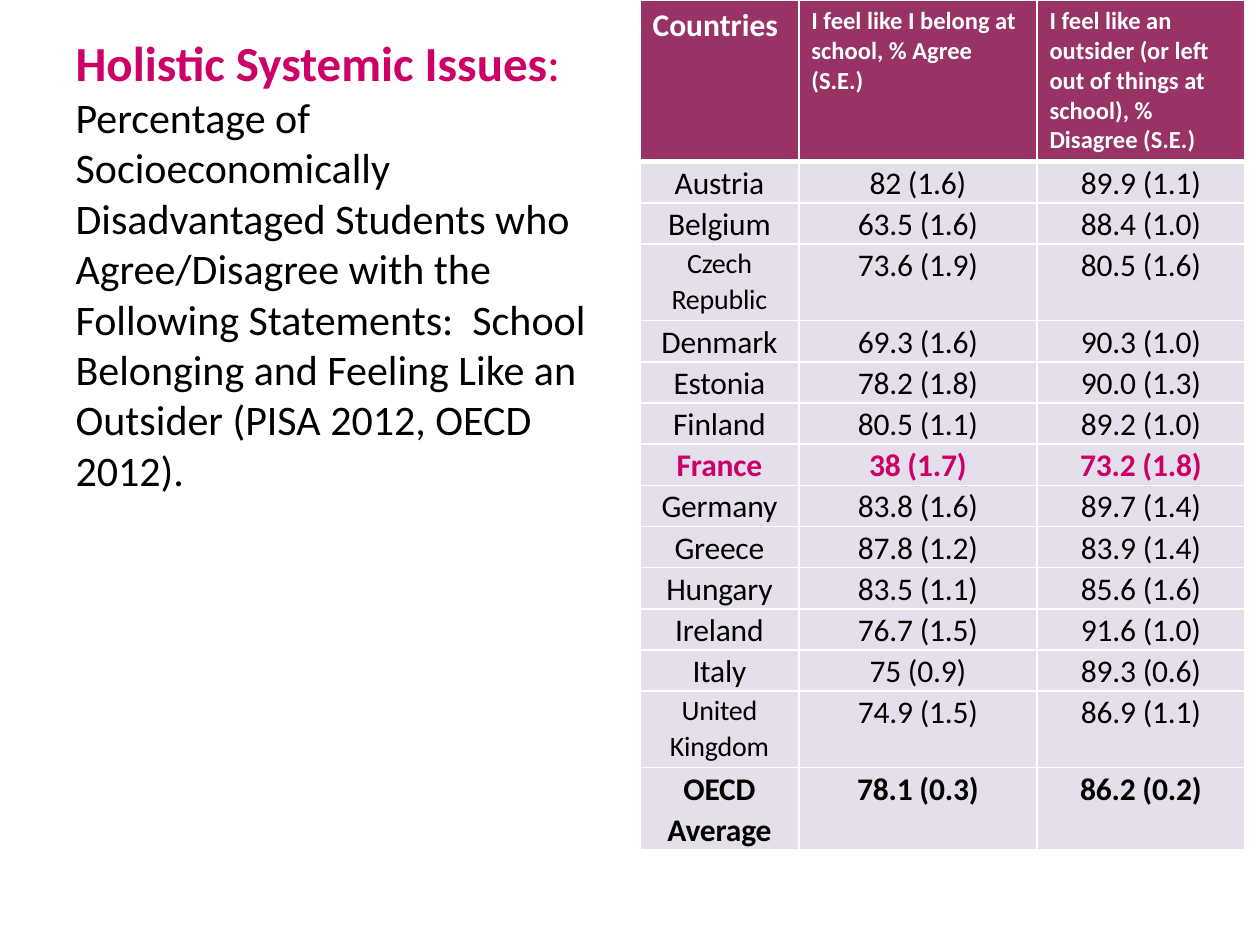
"""Build a slide on school belonging: a statement beside a table of countries."""
from dataclasses import dataclass

import pptx
import pptx.dml.color
import pptx.enum.text
import pptx.oxml
import pptx.oxml.ns
import pptx.util

COLORS = {"accent": "CC0066", "header": "993366", "body": "E5DFEC",
          "text": "000000", "white": "FFFFFF"}
FONT = "Calibri"
ALIGN = pptx.enum.text.PP_ALIGN
SLIDE_W, SLIDE_H = pptx.util.Inches(10), pptx.util.Inches(7.5)
COL_SHARES = (0.126, 0.189, 0.165)
HEADER_SHARE, ROW_SHARE, TALL_SHARE = 0.141, 0.04, 0.081
SIDE_INSET = pptx.util.Inches(0.07)
CELL_FORMAT = {"margin_left": SIDE_INSET, "margin_right": SIDE_INSET,
               "margin_top": 0, "margin_bottom": 0}


@dataclass
class Style:
    """Look of a run of text."""
    size: float
    color: str = "text"
    bold: bool = False
    spacing: int = 0


@dataclass
class Row:
    """A country with its two percentages."""
    country: str
    belong: str
    outsider: str
    size: float = 18
    color: str = "text"
    bold: bool = False
    share: float = ROW_SHARE


HEADERS = (
    ("Countries", 18),
    ("I feel like I belong at school, % Agree (S.E.)", 14),
    ("I feel like an outsider (or left out of things at school), % Disagree (S.E.)", 14),
)
ROWS = (
    Row("Austria", "82 (1.6)", "89.9 (1.1)"),
    Row("Belgium", "63.5 (1.6)", "88.4 (1.0)"),
    Row("Czech Republic", "73.6 (1.9)", "80.5 (1.6)", size=16, share=TALL_SHARE),
    Row("Denmark", "69.3 (1.6)", "90.3 (1.0)"),
    Row("Estonia", "78.2 (1.8)", "90.0 (1.3)"),
    Row("Finland", "80.5 (1.1)", "89.2 (1.0)"),
    Row("France", "38 (1.7)", "73.2 (1.8)", color="accent", bold=True),
    Row("Germany", "83.8 (1.6)", "89.7 (1.4)"),
    Row("Greece", "87.8 (1.2)", "83.9 (1.4)"),
    Row("Hungary", "83.5 (1.1)", "85.6 (1.6)"),
    Row("Ireland", "76.7 (1.5)", "91.6 (1.0)"),
    Row("Italy", "75 (0.9)", "89.3 (0.6)"),
    Row("United Kingdom", "74.9 (1.5)", "86.9 (1.1)", size=16, share=TALL_SHARE),
    Row("OECD Average", "78.1 (0.3)", "86.2 (0.2)", bold=True, share=TALL_SHARE),
)
STATEMENT = (
    ("Holistic Systemic Issues", Style(28, "accent", True)),
    (": ", Style(28, "accent")),
    ("Percentage of Socioeconomically Disadvantaged Students who Agree/Disagree "
     "with the Following Statements:  School Belonging and Feeling Like an "
     "Outsider (PISA 2012, OECD 2012).", Style(24)),
)


def across(share: float) -> int:
    """Turn a share of the slide's width into a length."""
    return round(SLIDE_W * share)


def down(share: float) -> int:
    """Turn a share of the slide's height into a length."""
    return round(SLIDE_H * share)


def rgb(name: str) -> pptx.dml.color.RGBColor:
    """Look up a colour by name."""
    return pptx.dml.color.RGBColor.from_string(COLORS[name])


def apply(target: object, values: dict) -> None:
    """Set each named attribute on an object."""
    for name, value in values.items():
        setattr(target, name, value)


def add_run(p, text: str, style: Style) -> None:
    """Append styled text to a paragraph."""
    r = p.add_run()
    r.text = text
    apply(r.font, {"name": FONT, "size": pptx.util.Pt(style.size), "bold": style.bold})
    r.font.color.rgb = rgb(style.color)
    if style.spacing:
        r.font._element.set("spc", str(style.spacing))


def add_borders(cell, widths: dict) -> None:
    """Draw white lines, with widths in points, around a cell."""
    props = cell._tc.get_or_add_tcPr()
    for side, width in widths.items():
        props.append(pptx.oxml.parse_xml(
            f'<a:ln{side} {pptx.oxml.ns.nsdecls("a")} w="{pptx.util.Pt(width)}">'
            f'<a:solidFill><a:srgbClr val="{COLORS["white"]}"/></a:solidFill></a:ln{side}>'))


def fill_cell(cell, text: str, style: Style, fill: str, top: int, bottom: int):
    """Fill a table cell and return its paragraph."""
    add_borders(cell, {"L": 1, "R": 1, "T": top, "B": bottom})
    cell.fill.solid()
    cell.fill.fore_color.rgb = rgb(fill)
    p = cell.text_frame.paragraphs[0]
    add_run(p, text, style)
    return p


def add_statement(s) -> None:
    """Write the statement in the two-column body placeholder."""
    title, sp = s.shapes.title, s.placeholders[1]
    title.element.getparent().remove(title.element)
    apply(sp, {"left": across(0.05), "top": down(0.028),
               "width": across(0.9), "height": down(0.83)})
    tf = sp.text_frame
    apply(tf, {"word_wrap": True, "auto_size": pptx.enum.text.MSO_AUTO_SIZE.NONE})
    tf._txBody.bodyPr.set("numCol", "2")
    p = tf.paragraphs[0]
    props = p._p.get_or_add_pPr()
    props.set("marL", "0")
    props.set("indent", "0")
    props.append(pptx.oxml.parse_xml(f'<a:buNone {pptx.oxml.ns.nsdecls("a")}/>'))
    p.space_before = pptx.util.Pt(0)
    for text, style in STATEMENT:
        add_run(p, text, style)


def add_country_table(s) -> None:
    """Add the table of countries."""
    shares = [HEADER_SHARE, *(row.share for row in ROWS)]
    table = s.shapes.add_table(len(shares), len(COL_SHARES), across(0.508), 0,
                               across(sum(COL_SHARES)), down(sum(shares))).table
    table.horz_banding = False
    for column, share in zip(table.columns, COL_SHARES):
        column.width = across(share)
    for line, share in zip(table.rows, shares):
        line.height = down(share)
    for j, (text, size) in enumerate(HEADERS):
        fill_cell(table.cell(0, j), text, Style(size, "white", True), "header", 1, 3)
    for i, row in enumerate(ROWS, 1):
        for j, text in enumerate((row.country, row.belong, row.outsider)):
            cell = table.cell(i, j)
            apply(cell, CELL_FORMAT)
            style = Style(row.size if j == 0 else 18, row.color, row.bold, -10)
            p = fill_cell(cell, text, style, "body", 3 if i == 1 else 1, 1)
            apply(p, {"alignment": ALIGN.CENTER, "line_spacing": 1.07})


def main() -> None:
    """Build and save the slide."""
    prs = pptx.Presentation()
    apply(prs, {"slide_width": SLIDE_W, "slide_height": SLIDE_H})
    s = prs.slides.add_slide(prs.slide_layouts[1])
    add_statement(s)
    add_country_table(s)
    prs.save("out.pptx")


if __name__ == "__main__":
    main()
